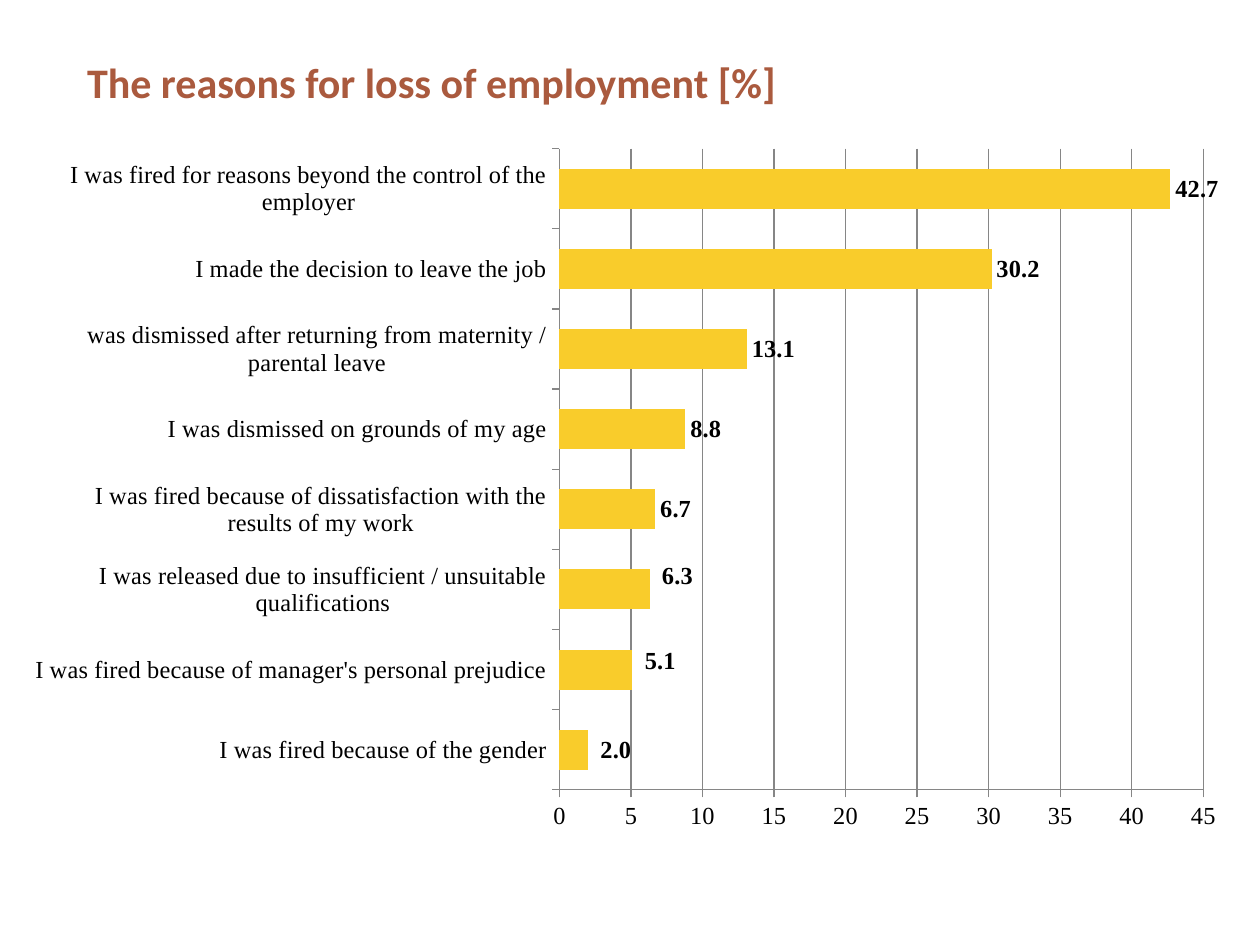
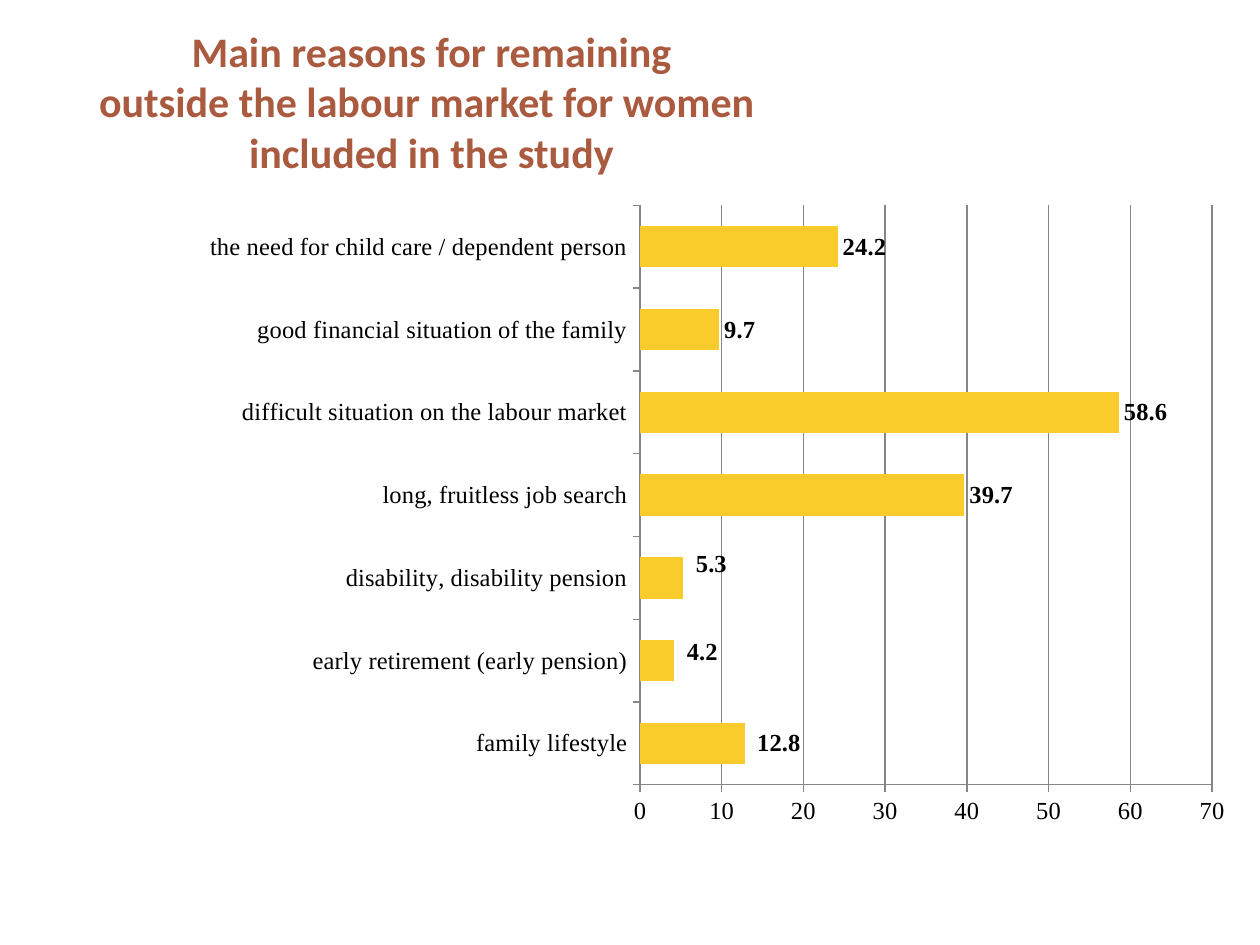
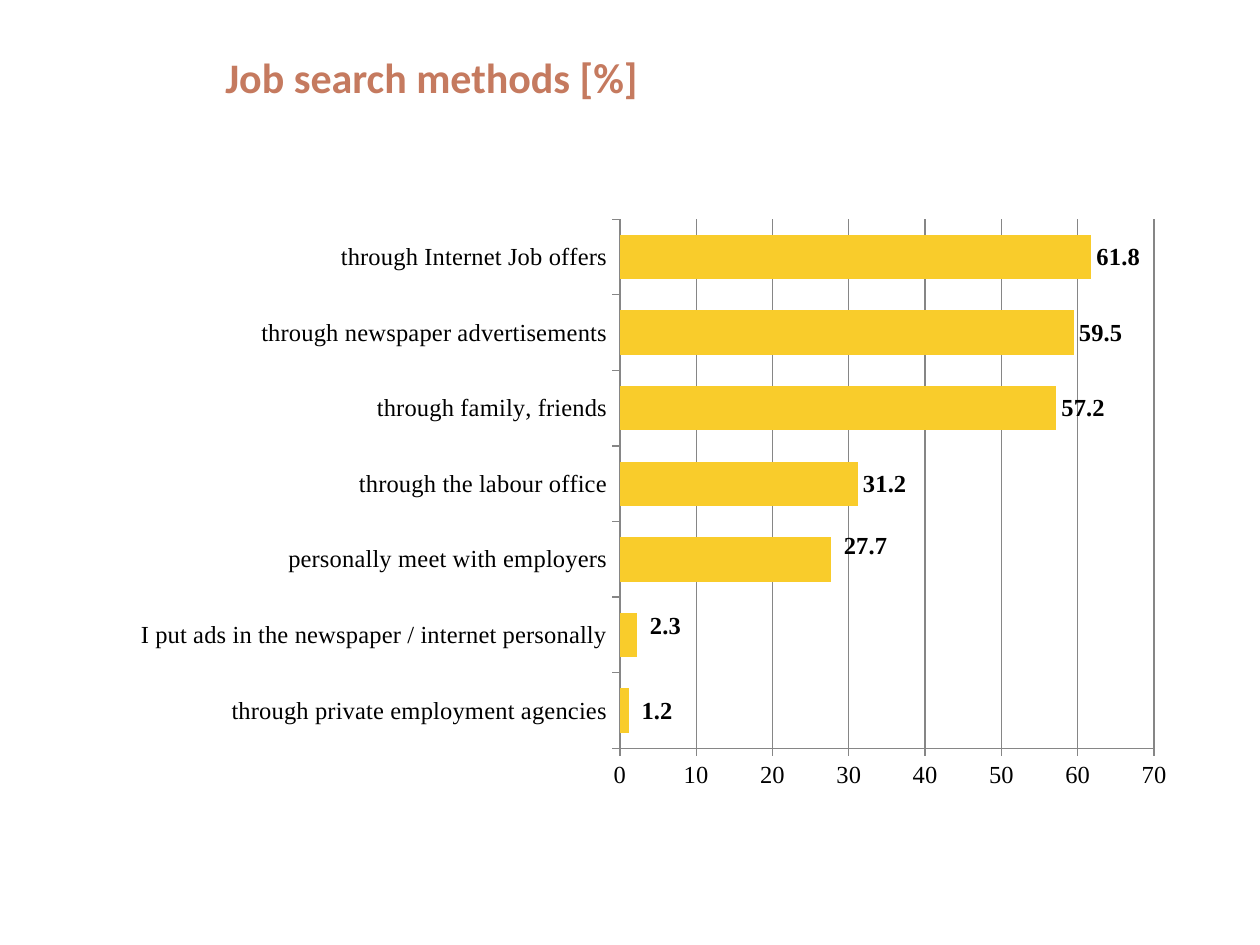
from pptx import Presentation
from pptx.chart.data import CategoryChartData
from pptx.dml.color import RGBColor
from pptx.enum.chart import XL_CHART_TYPE as ChartType
from pptx.enum.chart import XL_LABEL_POSITION as LabelPosition
from pptx.enum.chart import XL_TICK_MARK as TickMark
from pptx.enum.text import MSO_ANCHOR as Anchor
from pptx.enum.text import PP_ALIGN as Align
from pptx.oxml import parse_xml
from pptx.oxml.ns import nsdecls
from pptx.util import Inches, Pt

BROWN, LIGHT_BROWN, YELLOW = "AA5A3E", "C57A5F", "F9CC2B"
BLACK, GREY = "000000", "868686"
TITLE_LEFT, TITLE_TOP, TITLE_WIDTH = 0.12, 0.21, 6.61
SHARE_FORMAT = "0.0"
LABEL_SHIFT = 0.06
LABEL_RISES = (0, 0.07, 0.11)

SLIDES = [
    {
        "heading": {
            "lines": ["The reasons for loss of employment [%]"],
            "height": 0.87,
        },
        "bars": {
            "frame": (0.28, 1.15, 9.45, 5.51),
            "plot_area": (4.41, 1.18, 5.14, 5.09),
            "maximum": 45,
            "step": 5,
            "answers": {
                "I was fired because of the gender": 2,
                "I was fired because of manager's personal prejudice": 5.1,
                "I was released due to insufficient / unsuitable qualifications": 6.3,
                "I was fired because of dissatisfaction with the results of my work": 6.7,
                "I was dismissed on grounds of my age": 8.8,
                "was dismissed after returning from maternity / parental leave": 13.1,
                "I made the decision to leave the job": 30.2,
                "I was fired for reasons beyond the control of the employer": 42.7,
            },
        },
    },
    {
        "heading": {
            "lines": [
                "Main reasons for remaining",
                "outside the labour market for women ",
                "included in the study",
            ],
            "height": 1.18,
        },
        "bars": {
            "frame": (0.12, 1.47, 9.76, 5.28),
            "plot_area": (5.08, 1.63, 4.54, 4.6),
            "maximum": 70,
            "step": 10,
            "answers": {
                "family lifestyle": 12.8,
                "early retirement (early pension)": 4.2,
                "disability, disability pension": 5.3,
                "long, fruitless job search": 39.7,
                "difficult situation on the labour market": 58.6,
                "good financial situation of the family": 9.7,
                "the need for child care / dependent person": 24.2,
            },
        },
    },
    {
        "heading": {
            "lines": ["Job search methods [%]"],
            "height": 0.79,
            "color": LIGHT_BROWN,
        },
        "bars": {
            "frame": (0.59, 1.62, 8.98, 4.8),
            "plot_area": (4.92, 1.74, 4.24, 4.2),
            "maximum": 70,
            "step": 10,
            "gap": 70,
            "answers": {
                "through private employment agencies": 1.2,
                "I put ads in the newspaper / internet personally": 2.3,
                "personally meet with employers": 27.7,
                "through the labour office": 31.2,
                "through family, friends": 57.2,
                "through newspaper advertisements": 59.5,
                "through Internet Job offers": 61.8,
            },
        },
    },
]


def rgb(color):
    """Turn a hex string into a colour."""
    return RGBColor.from_string(color)


def style_font(font, name="Times New Roman", size=14, color=BLACK, bold=False):
    """Set the look of a font."""
    font.name, font.size, font.bold = name, Pt(size), bold
    font.color.rgb = rgb(color)


def write(paragraph, lines, align=Align.CENTER, **font_format):
    """Write lines into one paragraph in the given format."""
    paragraph.alignment = align
    for number, line in enumerate(lines):
        if number:
            paragraph.add_line_break()
        run = paragraph.add_run()
        run.text = line
        style_font(run.font, **font_format)


def chart_xml(tag, content="", **attributes):
    """Build a chart element from its tag, content and attributes."""
    listed = "".join(f' {key}="{value}"' for key, value in attributes.items())
    return parse_xml(f'<c:{tag} {nsdecls("c")}{listed}>{content}</c:{tag}>')


def manual_layout(**settings):
    """Build a layout element from its settings."""
    content = "".join(f'<c:{key} val="{value}"/>' for key, value in settings.items())
    return chart_xml("layout", f"<c:manualLayout>{content}</c:manualLayout>")


class Deck:
    """Holds the presentation style and the current slide."""

    def __init__(self):
        """Start an empty presentation."""
        self.presentation = Presentation()
        self.presentation.slide_width = Inches(10)
        self.presentation.slide_height = Inches(7.5)
        self.slide = None

    def add_slide(self):
        """Open a new blank slide."""
        blank = self.presentation.slide_layouts[6]
        self.slide = self.presentation.slides.add_slide(blank)

    def add_heading(self, lines, height, color=BROWN):
        """Add the slide heading."""
        place = map(Inches, (TITLE_LEFT, TITLE_TOP, TITLE_WIDTH, height))
        heading = self.slide.shapes.add_textbox(*place).text_frame
        heading.word_wrap = True
        heading.vertical_anchor = Anchor.MIDDLE
        write(heading.paragraphs[0], lines,
              name="Calibri", size=24, color=color, bold=True)

    def add_bars(self, answers, frame, plot_area, maximum, step, gap=100):
        """Add a bar chart of the answers."""
        data = CategoryChartData()
        data.categories = answers.keys()
        data.add_series("Series 1", answers.values())
        chart = self.slide.shapes.add_chart(
            ChartType.BAR_CLUSTERED, *map(Inches, frame), data
        ).chart
        chart.has_legend = chart.has_title = False
        style_font(chart.font)

        bars = chart.plots[0]
        bars.gap_width = gap
        bars.vary_by_categories = False
        fill = bars.series[0].format.fill
        fill.solid()
        fill.fore_color.rgb = rgb(YELLOW)

        self.style_axes(chart, maximum, step)
        self.place_plot_area(chart, frame, plot_area)
        self.label_shares(chart)
        self.move_lowest_labels(chart, frame)

    def style_axes(self, chart, maximum, step):
        """Set the axis lines, ticks and scale."""
        answer_axis, share_axis = chart.category_axis, chart.value_axis
        share_axis.minimum_scale = 0
        share_axis.maximum_scale = maximum
        share_axis.major_unit = step
        share_axis.has_major_gridlines = True
        share_axis.tick_labels.number_format = "#,##0"
        share_axis.tick_labels.number_format_is_linked = False
        for axis in (answer_axis, share_axis):
            axis.major_tick_mark = TickMark.OUTSIDE
            axis.minor_tick_mark = TickMark.NONE
        for ruled in (answer_axis, share_axis, share_axis.major_gridlines):
            ruled.format.line.color.rgb = rgb(GREY)
            ruled.format.line.width = Pt(0.75)

    def place_plot_area(self, chart, frame, plot_area):
        """Place the plot area, given in slide inches, inside the chart frame."""
        frame_left, frame_top, frame_width, frame_height = frame
        left, top, width, height = plot_area
        plot = chart.element.xpath("c:chart/c:plotArea")[0]
        for automatic in plot.xpath("c:layout"):
            plot.remove(automatic)
        plot.insert(0, manual_layout(
            layoutTarget="inner", xMode="edge", yMode="edge",
            x=(left - frame_left) / frame_width,
            y=(top - frame_top) / frame_height,
            w=width / frame_width,
            h=height / frame_height,
        ))

    def label_shares(self, chart):
        """Label each bar with its share, without leader lines."""
        shares = chart.plots[0].series[0]
        labels = shares.data_labels
        labels.show_value = True
        labels.number_format = SHARE_FORMAT
        labels.number_format_is_linked = False
        lowest = [shares.points[index].data_label for index in range(len(LABEL_RISES))]
        for label in (labels, *lowest):
            label.position = LabelPosition.OUTSIDE_END
            style_font(label.font, bold=True)
        for leader_lines in chart.element.xpath(".//c:showLeaderLines"):
            leader_lines.set("val", "0")

    def move_lowest_labels(self, chart, frame):
        """Move the labels of the lowest bars aside and up."""
        _, _, width, height = frame
        for label, rise in zip(chart.element.xpath(".//c:dLbl"), LABEL_RISES):
            label.insert(1, manual_layout(x=LABEL_SHIFT / width, y=-rise / height))
            label.insert(2, chart_xml("numFmt", formatCode=SHARE_FORMAT, sourceLinked=0))


def main():
    """Build the three slides."""
    deck = Deck()
    for content in SLIDES:
        deck.add_slide()
        deck.add_heading(**content["heading"])
        deck.add_bars(**content["bars"])
    deck.presentation.save("out.pptx")


if __name__ == "__main__":
    main()
